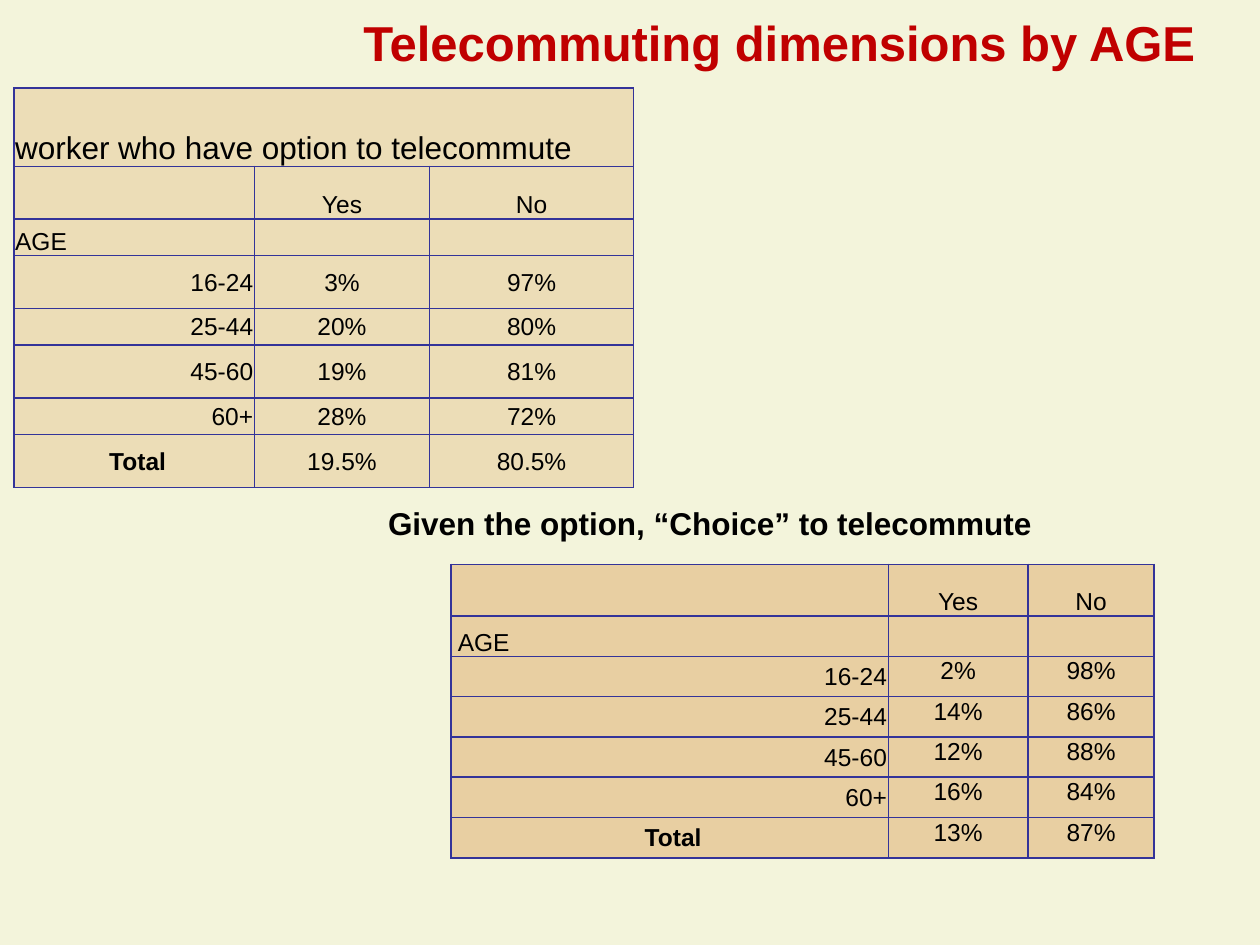
from dataclasses import dataclass

from lxml.etree import SubElement as Sub
from pptx import Presentation as Deck
from pptx.dml.color import RGBColor as Rgb
from pptx.enum.text import MSO_ANCHOR as Anchor, PP_ALIGN as Align
from pptx.oxml.ns import qn
from pptx.util import Inches, Pt

INK = "000000"
EDGE = "333399"
SAND = "CC6600"
FACE = "Arial"
AGES = ("16-24", "25-44", "45-60", "60+")


@dataclass
class Grid:
    left: float
    top: float
    cols: list[float]
    rows: list[float]
    cells: list[tuple[str, ...]]
    shade: int
    anchor: Anchor
    banner: bool = False


def tint(text: str) -> Rgb:
    return Rgb.from_string(text)


def add_run(para, text: str, size: int, color: str = INK, bold: bool = False) -> None:
    run = para.add_run()
    run.text = text
    font = run.font
    font.name, font.size, font.bold = FACE, Pt(size), bold
    font.color.rgb = tint(color)


def add_edge(props) -> None:
    for spot, side in enumerate(("lnL", "lnR", "lnT", "lnB")):
        line = Sub(props, qn(f"a:{side}"), w=str(Pt(1)))
        Sub(Sub(line, qn("a:solidFill")), qn("a:srgbClr"), val=EDGE)
        props.insert(spot, line)


def paint(cell, shade: int) -> None:
    cell.margin_left = cell.margin_right = cell.margin_top = Inches(0.01)
    cell.margin_bottom = 0
    cell.fill.solid()
    cell.fill.fore_color.rgb = tint(SAND)
    props = cell._tc.get_or_add_tcPr()
    Sub(props.find(".//" + qn("a:srgbClr")), qn("a:alpha"), val=str(shade * 1000))
    add_edge(props)


def write(cell, text: str, col: int, size: int, anchor: Anchor) -> None:
    para = cell.text_frame.paragraphs[0]
    cell.vertical_anchor = anchor
    if not text:
        Sub(para._p, qn("a:endParaRPr"), sz=str(size * 100))
        return
    if col or text == "Total":
        para.alignment = Align.CENTER
    elif text in AGES:
        para.alignment = Align.RIGHT
    if text == "Total":
        add_run(para, " ", size)
    add_run(para, text, size, bold=text == "Total")


def add_grid(slide, grid: Grid) -> None:
    frame = slide.shapes.add_table(
        len(grid.rows), len(grid.cols), Inches(grid.left), Inches(grid.top),
        Inches(sum(grid.cols)), Inches(sum(grid.rows)))
    table = frame.table
    table.first_row = table.horz_banding = False
    for col, width in zip(table.columns, grid.cols):
        col.width = Inches(width)
    for row, height in zip(table.rows, grid.rows):
        row.height = Inches(height)
    body = len(grid.rows) - len(AGES) - 1
    for r, line in enumerate(grid.cells):
        for c, text in enumerate(line):
            cell = table.cell(r, c)
            paint(cell, grid.shade)
            if r < body:
                anchor = Anchor.BOTTOM
            else:
                anchor = grid.anchor if c else Anchor.MIDDLE
            write(cell, text, c, 18 if grid.banner and r == 0 else 14, anchor)
    if grid.banner:
        table.cell(0, 0).merge(table.cell(0, len(grid.cols) - 1))


def add_title(slide) -> None:
    title = slide.shapes.title
    title.left, title.top = Inches(2.52), Inches(0)
    title.width, title.height = Inches(7.33), Inches(0.67)
    title.text_frame.vertical_anchor = Anchor.MIDDLE
    para = title.text_frame.paragraphs[0]
    para.alignment = Align.CENTER
    add_run(para, "Telecommuting dimensions by AGE", 28, "C00000", True)


def add_head(slide) -> None:
    box = slide.shapes.add_textbox(Inches(1.88), Inches(3.95), Inches(7.58), Inches(0.4))
    box.text_frame.word_wrap = True
    para = box.text_frame.paragraphs[0]
    para.alignment = Align.CENTER
    add_run(para, "Given the option, “Choice” to telecommute ", 18, bold=True)


def main() -> None:
    deck = Deck()
    deck.slide_width, deck.slide_height = Inches(10), Inches(7.5)
    slide = deck.slides.add_slide(deck.slide_layouts[5])
    back = slide.background.fill
    back.solid()
    back.fore_color.rgb = tint("F3F4DB")

    add_grid(slide, Grid(
        0.11, 0.7, [1.91, 1.39, 1.62], [0.62] + [0.42, 0.29] * 3 + [0.42],
        [("worker who have option to telecommute", "", ""),
         ("", "Yes", "No"),
         ("AGE", "", ""),
         *zip(AGES, ("3%", "20%", "19%", "28%"), ("97%", "80%", "81%", "72%")),
         ("Total", "19.5%", "80.5%")],
        16, Anchor.MIDDLE, True))
    add_head(slide)
    add_grid(slide, Grid(
        3.58, 4.48, [3.47, 1.11, 1], [0.41] + [0.32] * 6,
        [("", "Yes", "No"),
         (" AGE", "", ""),
         *zip(AGES, ("2%", "14%", "12%", "16%"), ("98%", "86%", "88%", "84%")),
         ("Total", "13%", "87%")],
        26, Anchor.TOP))
    add_title(slide)
    deck.save("out.pptx")


if __name__ == "__main__":
    main()
